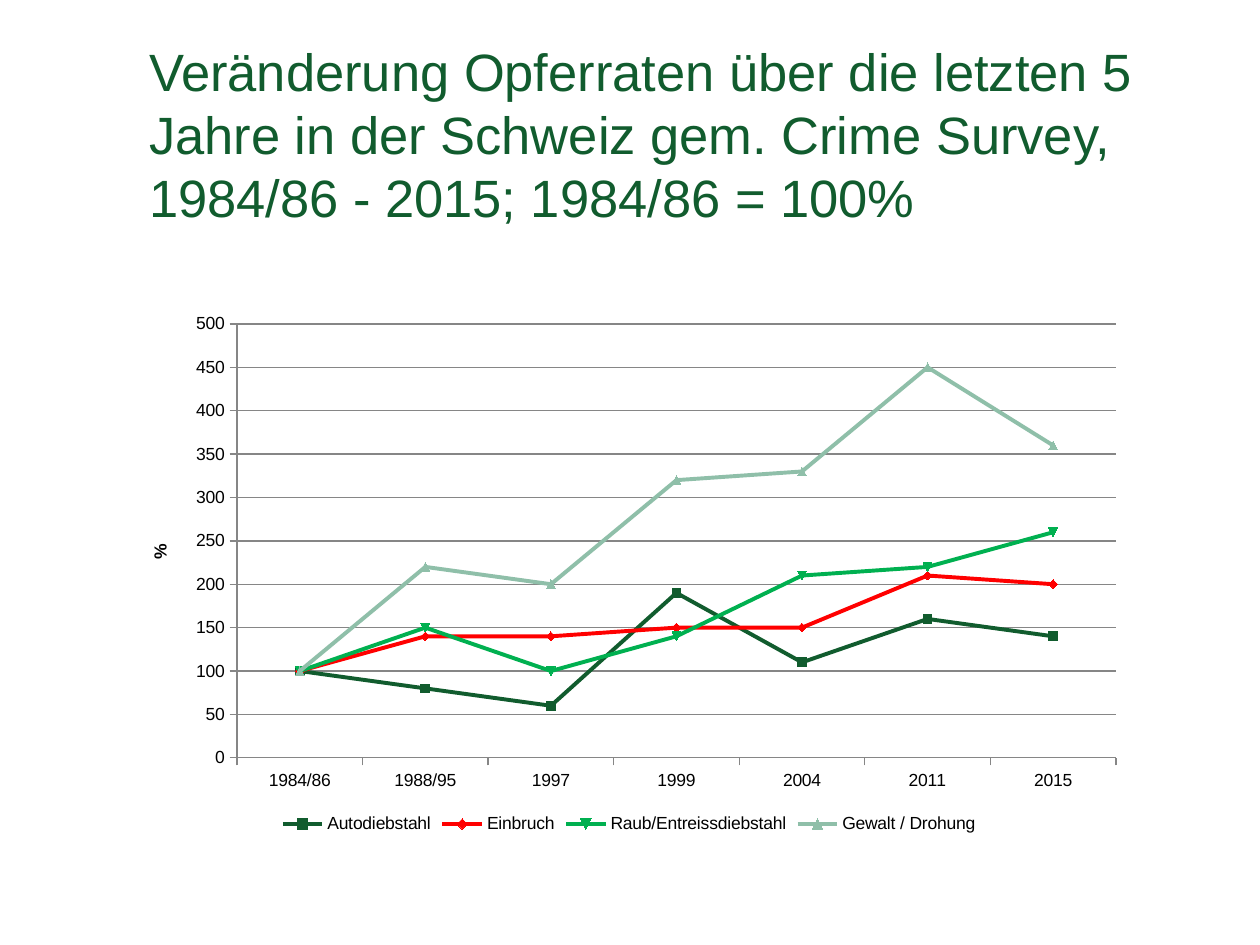
from lxml import etree
from pptx import Presentation
from pptx import util as u
from pptx.chart.data import CategoryChartData
from pptx.dml.color import RGBColor
from pptx.enum import chart as ch
from pptx.enum import text
from pptx.oxml.ns import qn

DARK_GREEN = RGBColor(0x11, 0x5C, 0x2E)
RED = RGBColor(0xFF, 0x00, 0x00)
GREEN = RGBColor(0x00, 0xB0, 0x50)
PALE_GREEN = RGBColor(0x8F, 0xBF, 0xA9)
GREY = RGBColor(0x86, 0x86, 0x86)
BLACK = RGBColor(0x00, 0x00, 0x00)
FONT = "Arial"

TITLE = ("Veränderung Opferraten über die letzten 5 Jahre in der Schweiz "
         "gem. Crime Survey, 1984/86 - 2015; 1984/86 = 100%")
PERIODS = ["1984/86", "1988/95", "1997", "1999", "2004", "2011", "2015"]
OFFENCES = [
    ("Autodiebstahl", DARK_GREEN, [100, 80, 60, 190, 110, 160, 140]),
    ("Einbruch", RED, [100, 140, 140, 150, 150, 210, 200]),
    ("Raub/Entreissdiebstahl", GREEN, [100, 150, 100, 140, 210, 220, 260]),
    ("Gewalt / Drohung", PALE_GREEN, [100, 220, 200, 320, 330, 450, 360]),
]

# Left, top, width, height in px
TITLE_BOX = (149, 39, 1091, 139)
CHART_BOX = (123, 304, 1012, 535)
PLOT_BOX = (237, 324, 879, 434)


def px(length):
    return u.Emu(round(length * 914400 / 126))


def add_title(page):
    title = page.shapes.title
    title.left, title.top, title.width, title.height = map(px, TITLE_BOX)
    frame = title.text_frame
    frame.margin_left = frame.margin_top = frame.margin_right = frame.margin_bottom = 0
    frame.vertical_anchor = text.MSO_ANCHOR.TOP
    frame.auto_size = text.MSO_AUTO_SIZE.NONE
    frame.word_wrap = True
    frame.text = TITLE
    para = frame.paragraphs[0]
    para.alignment = text.PP_ALIGN.LEFT
    para.line_spacing = u.Pt(36)
    para.font.name, para.font.size = FONT, u.Pt(30)
    para.font.color.rgb = DARK_GREEN


def place_plot(chart):
    """Fix the inner plot area as fractions of the chart."""
    plot_area = chart.plots[0]._element.getparent()
    layout = plot_area.find(qn("c:layout"))
    if layout is None:
        layout = etree.Element(qn("c:layout"))
        plot_area.insert(0, layout)
    manual = etree.SubElement(layout, qn("c:manualLayout"))
    left, top, width, height = CHART_BOX
    x, y, w, h = PLOT_BOX
    settings = [("layoutTarget", "inner"), ("xMode", "edge"), ("yMode", "edge"),
                ("x", (x - left) / width), ("y", (y - top) / height),
                ("w", w / width), ("h", h / height)]
    for name, value in settings:
        etree.SubElement(manual, qn(f"c:{name}")).set("val", str(value))


def style_axes(chart):
    values = chart.value_axis
    values.minimum_scale, values.maximum_scale, values.major_unit = 0, 500, 50
    values.has_major_gridlines = True
    values.major_gridlines.format.line.color.rgb = GREY
    values.tick_labels.number_format = "0"
    values.tick_labels.number_format_is_linked = False
    values.axis_title.text_frame.text = "%"
    font = values.axis_title.text_frame.paragraphs[0].font
    font.name, font.size, font.bold = FONT, u.Pt(10), True
    font.color.rgb = BLACK
    for axis in (values, chart.category_axis):
        axis.major_tick_mark = ch.XL_TICK_MARK.OUTSIDE
        axis.format.line.color.rgb = GREY


def add_chart(page):
    data = CategoryChartData()
    data.categories = PERIODS
    for name, _, rates in OFFENCES:
        data.add_series(name, rates)
    chart = page.shapes.add_chart(
        ch.XL_CHART_TYPE.LINE_MARKERS, *map(px, CHART_BOX), data).chart
    chart.has_title = False
    chart.font.name, chart.font.size = FONT, u.Pt(10)
    chart.font.color.rgb = BLACK
    chart.has_legend = True
    chart.legend.position = ch.XL_LEGEND_POSITION.BOTTOM
    chart.legend.include_in_layout = False
    chart.plots[0].vary_by_categories = False
    for series, (_, color, _) in zip(chart.plots[0].series, OFFENCES):
        series.smooth = False
        series.format.line.color.rgb = color
        series.format.line.width = u.Pt(2.25)
        marker = series.marker
        marker.style, marker.size = ch.XL_MARKER_STYLE.AUTOMATIC, 5
        marker.format.fill.solid()
        marker.format.fill.fore_color.rgb = color
        marker.format.line.color.rgb = color
    style_axes(chart)
    place_plot(chart)


def main():
    deck = Presentation()
    deck.slide_width, deck.slide_height = px(1260), px(945)
    page = deck.slides.add_slide(deck.slide_layouts.get_by_name("Title Only"))
    add_title(page)
    add_chart(page)
    deck.save("out.pptx")


if __name__ == "__main__":
    main()
